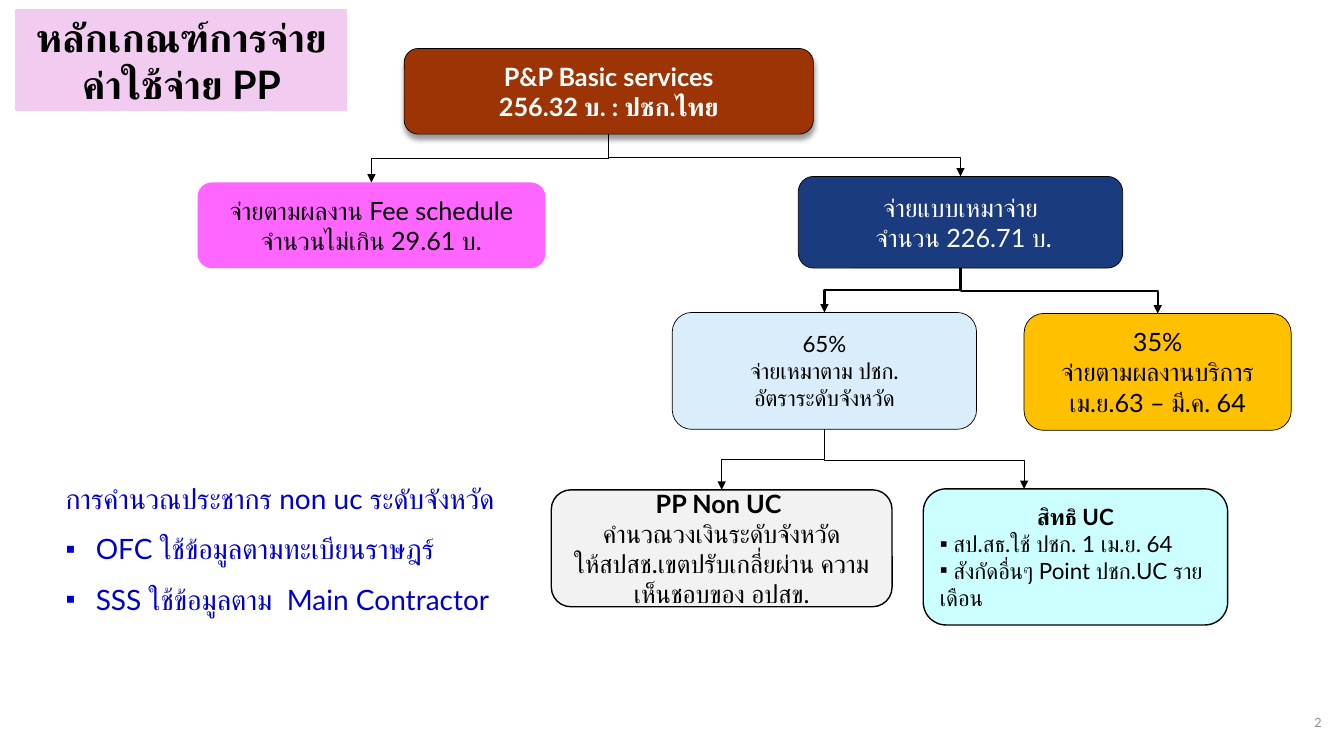
from dataclasses import dataclass
from typing import Optional

from lxml.etree import SubElement
from pptx import Presentation
from pptx.dml.color import RGBColor as Rgb
from pptx.enum.shapes import MSO_CONNECTOR as Link, MSO_SHAPE as Preset
from pptx.enum.text import MSO_ANCHOR as Anchor, MSO_AUTO_SIZE as AutoSize, PP_ALIGN as Align
from pptx.oxml.ns import qn
from pptx.util import Pt


@dataclass(frozen=True)
class Theme:
    font: str = "Lato"
    bullet_font: str = "Arial"
    bullet: str = "▪"
    black: str = "000000"
    white: str = "FFFFFF"
    title_fill: str = "F1CCF0"
    services: str = "9D3405"
    fee: str = "FF66FF"
    lump_sum: str = "1B3B7F"
    capitation: str = "DAEDFB"
    results: str = "FFC000"
    non_uc: str = "F2F2F2"
    uc: str = "CCFFFF"
    note_text: str = "0000CC"
    number_text: str = "8C8C8C"
    title_size: float = 28
    note_size: float = 20
    box_size: float = 18
    small_size: float = 16
    number_size: float = 9


THEME = Theme()


@dataclass(frozen=True)
class Line:
    text: str
    bold: bool = False
    bullet: bool = False
    align: Align = Align.CENTER
    hang: float = 0


@dataclass(frozen=True)
class Box:
    left: float
    top: float
    width: float
    height: float
    fill: str
    lines: tuple[Line, ...]
    size: float = THEME.box_size
    color: str = THEME.black
    border: Optional[float] = 0.5
    shadow: bool = False

    @property
    def center(self) -> float:
        return self.left + self.width / 2

    @property
    def bottom(self) -> float:
        return self.top + self.height


@dataclass(frozen=True)
class Branch:
    parent: Box
    child: Box
    weight: float
    drop: Optional[float] = None  # a branch off the stem starts this far down
    end_shift: float = 0


def write_lines(frame, lines: tuple[Line, ...], size: float, color: str,
                spacing: Optional[float] = None) -> None:
    frame.word_wrap = True
    for index, line in enumerate(lines):
        paragraph = frame.paragraphs[0] if index == 0 else frame.add_paragraph()
        paragraph.text = line.text
        paragraph.alignment = line.align
        paragraph.space_before = Pt(0)
        if spacing:
            paragraph.line_spacing = spacing
        properties = paragraph._p.get_or_add_pPr()
        properties.set("marL", str(Pt(line.hang)))
        properties.set("indent", str(-Pt(line.hang)))
        if line.bullet:
            SubElement(properties, qn("a:buFont"), typeface=THEME.bullet_font)
            SubElement(properties, qn("a:buChar"), char=THEME.bullet)
        else:
            SubElement(properties, qn("a:buNone"))
        font = paragraph.font
        font.size, font.bold, font.name = Pt(size), line.bold, THEME.font
        font.color.rgb = Rgb.from_string(color)
        # Thai letters take the complex-script font
        SubElement(properties.find(qn("a:defRPr")), qn("a:cs"), typeface=THEME.font)


def place(shape, left: float, top: float, width: float, height: float) -> None:
    shape.left, shape.top = Pt(left), Pt(top)
    shape.width, shape.height = Pt(width), Pt(height)


def draw_box(slide, box: Box) -> None:
    shape = slide.shapes.add_shape(Preset.ROUNDED_RECTANGLE, Pt(box.left), Pt(box.top),
                                   Pt(box.width), Pt(box.height))
    shape.fill.solid()
    shape.fill.fore_color.rgb = Rgb.from_string(box.fill)
    if box.border:
        shape.line.color.rgb = Rgb.from_string(THEME.black)
        shape.line.width = Pt(box.border)
    else:
        shape.line.fill.background()
    shape.shadow.inherit = False
    if box.shadow:
        effects = shape._element.spPr.find(qn("a:effectLst"))
        outer = SubElement(effects, qn("a:outerShdw"), blurRad=str(Pt(4)), dist=str(Pt(3)),
                           dir="5400000", algn="t", rotWithShape="0")
        shade = SubElement(outer, qn("a:srgbClr"), val=THEME.black)
        SubElement(shade, qn("a:alpha"), val="40000")
    shape.text_frame.vertical_anchor = Anchor.MIDDLE
    write_lines(shape.text_frame, box.lines, box.size, box.color)


def draw_branch(slide, branch: Branch) -> None:
    start_x, end_x = branch.parent.center, branch.child.center + branch.end_shift
    start_y, end_y = branch.parent.bottom + (branch.drop or 0), branch.child.top
    left, top, width, height = min(start_x, end_x), start_y, abs(end_x - start_x), end_y - start_y
    if branch.drop is None:  # vertical first: swap the sides around the centre, then turn
        left, top = left + (width - height) / 2, top + (height - width) / 2
        width, height = height, width
    arrow = slide.shapes.add_connector(Link.ELBOW, Pt(left), Pt(top),
                                       Pt(left + width), Pt(top + height))
    properties = arrow._element.spPr
    if branch.drop is not None:
        properties.find(qn("a:prstGeom")).set("prst", "bentConnector2")
    else:
        frame = properties.find(qn("a:xfrm"))
        rightward = end_x > start_x
        frame.set("rot", "16200000" if rightward else "5400000")
        if rightward:
            frame.set("flipH", "1")
    arrow.line.color.rgb = Rgb.from_string(THEME.black)
    arrow.line.width = Pt(branch.weight)
    SubElement(properties.find(qn("a:ln")), qn("a:tailEnd"), type="triangle")
    SubElement(properties, qn("a:effectLst"))


# Payment tree
services = Box(288.7, 34.6, 292.3, 61.2, THEME.services, (
    Line("P&P Basic services", bold=True), Line("256.32 บ. : ปชก.ไทย", bold=True)),
    color=THEME.white, shadow=True)
fee_schedule = Box(141.1, 130.3, 248.4, 61.2, THEME.fee, (
    Line("จ่ายตามผลงาน Fee schedule"), Line("จำนวนไม่เกิน 29.61 บ.")), border=None)
lump_sum = Box(570.2, 126, 231.8, 65.5, THEME.lump_sum, (
    Line("จ่ายแบบเหมาจ่าย"), Line(" จำนวน 226.71 บ.")), color=THEME.white)
capitation = Box(480.2, 223.2, 217.4, 83.5, THEME.capitation, (
    Line("65%"), Line("จ่ายเหมาตาม ปชก."), Line("อัตราระดับจังหวัด")), size=THEME.small_size)
results = Box(731.5, 223.9, 190.8, 83.5, THEME.results, (
    Line("35%"), Line("จ่ายตามผลงานบริการ เม.ย.63 – มี.ค. 64")))
non_uc = Box(393.8, 349.9, 243.4, 83.5, THEME.non_uc, (
    Line("PP Non UC ", bold=True), Line("คำนวณวงเงินระดับจังหวัด"),
    Line("ให้สปสช.เขตปรับเกลี่ยผ่าน ความเห็นชอบของ อปสข.")), border=1)
uc = Box(659.5, 349.2, 217.4, 97.2, THEME.uc, (
    Line("สิทธิ UC", bold=True),
    Line(" สป.สธ.ใช้ ปชก. 1 เม.ย. 64", bullet=True, align=Align.LEFT),
    Line(" สังกัดอื่นๆ Point ปชก.UC รายเดือน", bullet=True, align=Align.LEFT)),
    size=THEME.small_size, border=1)
BOXES = (services, fee_schedule, lump_sum, capitation, results, non_uc, uc)
BRANCHES = (
    Branch(services, fee_schedule, 1), Branch(services, lump_sum, 1, drop=16.5),
    Branch(lump_sum, capitation, 1.5), Branch(lump_sum, results, 1.5),
    Branch(capitation, non_uc, 0.5), Branch(capitation, uc, 0.5, drop=22.3, end_shift=-36.7),
)
POPULATION_NOTES = (
    Line("การคำนวณประชากร non uc ระดับจังหวัด", align=Align.LEFT),
    Line("OFC ใช้ข้อมูลตามทะเบียนราษฎร์", bullet=True, align=Align.LEFT, hang=21.6),
    Line("SSS ใช้ข้อมูลตาม  Main Contractor", bullet=True, align=Align.LEFT, hang=21.6),
)


def main() -> None:
    deck = Presentation()
    deck.slide_width, deck.slide_height = Pt(960), Pt(540)
    slide = deck.slides.add_slide(deck.slide_layouts[1])

    # Title
    title = slide.shapes.title
    place(title, 11.5, 7.2, 236.2, 71.3)
    title.fill.solid()
    title.fill.fore_color.rgb = Rgb.from_string(THEME.title_fill)
    title.line.color.rgb = Rgb.from_string(THEME.title_fill)
    title.line.width = Pt(1)
    title.text_frame.auto_size = AutoSize.NONE
    title.text_frame.vertical_anchor = Anchor.MIDDLE
    write_lines(title.text_frame, (Line("หลักเกณฑ์การจ่ายค่าใช้จ่าย PP", bold=True),),
                THEME.title_size, THEME.black)

    # Population notes
    notes = slide.placeholders[1]
    place(notes, 39.6, 328.3, 362.9, 111.6)
    notes.text_frame.auto_size = AutoSize.NONE
    write_lines(notes.text_frame, POPULATION_NOTES, THEME.note_size, THEME.note_text, 1.5)

    # Tree
    for box in BOXES:
        draw_box(slide, box)
    for branch in BRANCHES:
        draw_branch(slide, branch)

    # Slide number
    number = slide.shapes.add_textbox(Pt(735.1), Pt(500.4), Pt(216), Pt(28.8))
    number.text_frame.vertical_anchor = Anchor.MIDDLE
    write_lines(number.text_frame, (Line("2", align=Align.RIGHT),),
                THEME.number_size, THEME.number_text, 1.2)

    deck.save("out.pptx")


if __name__ == "__main__":
    main()
